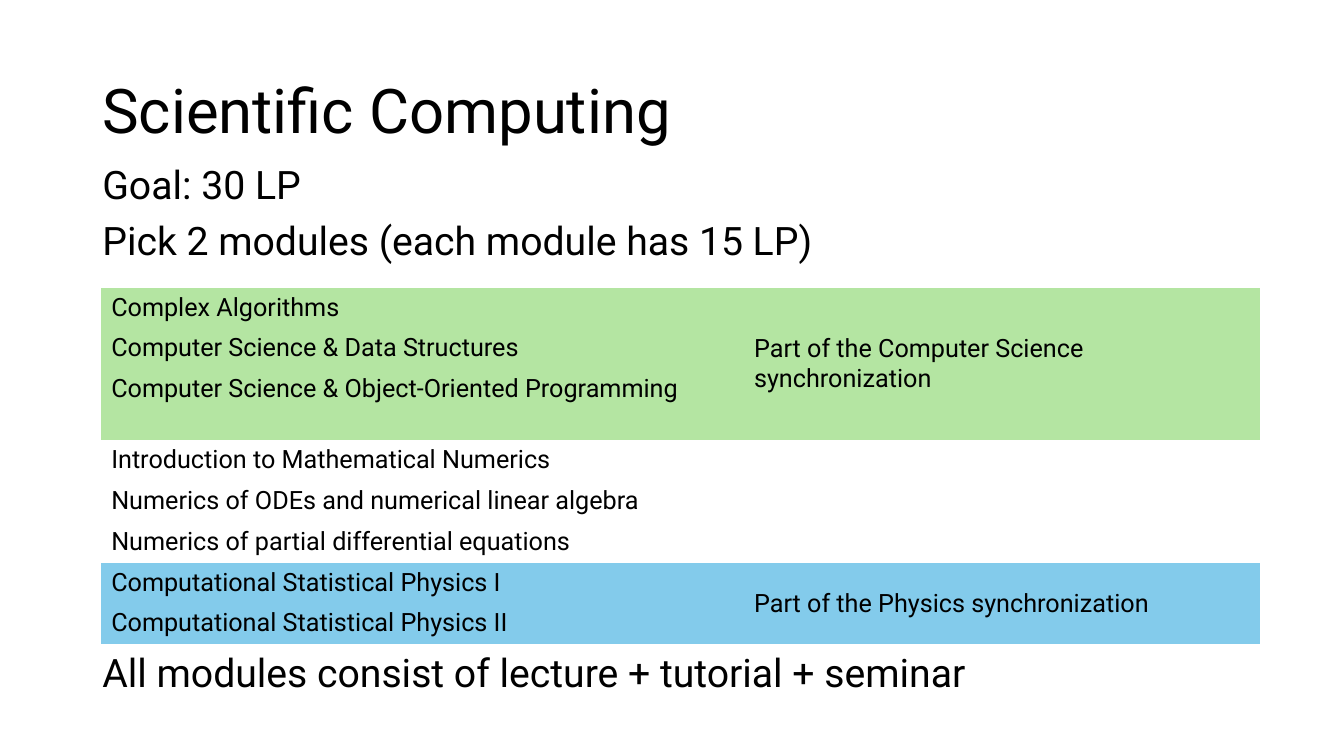
from dataclasses import dataclass

from pptx import Presentation
from pptx.dml.color import RGBColor
from pptx.enum.text import MSO_ANCHOR as Anchor
from pptx.oxml.ns import qn
from pptx.util import Cm, Pt


@dataclass(frozen=True)
class Theme:
    font: str = "Roboto"
    ink: str = "000000"
    computer_science: str = "B4E5A2"
    physics: str = "83CBEB"
    title_size: int = 44
    body_size: int = 28
    table_size: int = 18
    plain_table: str = "{2D5ABB26-0587-4C30-8999-92F81FD0307C}"


THEME = Theme()

# Each group: modules, shared remark, colour
MODULE_GROUPS = [
    (["Complex Algorithms",
      "Computer Science & Data Structures",
      "Computer Science & Object-Oriented Programming"],
     "Part of the Computer Science synchronization", THEME.computer_science),
    (["Introduction to Mathematical Numerics",
      "Numerics of ODEs and numerical linear algebra",
      "Numerics of partial differential equations"],
     None, None),
    (["Computational Statistical Physics I",
      "Computational Statistical Physics II"],
     "Part of the Physics synchronization", THEME.physics),
]


class SlideBuilder:
    def __init__(self, slide, theme):
        self.slide = slide
        self.theme = theme

    def style(self, paragraph, size):
        font = paragraph.font
        font.name = self.theme.font
        font.size = Pt(size)
        font.color.rgb = RGBColor.from_string(self.theme.ink)

    def text(self, lines, left, top, width, height, size,
             anchor=Anchor.TOP, line_spacing=1.0):
        box = self.slide.shapes.add_textbox(Cm(left), Cm(top), Cm(width), Cm(height))
        frame = box.text_frame
        frame.word_wrap = True
        frame.vertical_anchor = anchor
        frame.text = "\n".join(lines)
        for index, paragraph in enumerate(frame.paragraphs):
            paragraph.line_spacing = line_spacing
            paragraph.space_before = Pt(10 if index else 0)
            self.style(paragraph, size)

    def cell(self, cell, words, fill):
        if fill:
            cell.fill.solid()
            cell.fill.fore_color.rgb = RGBColor.from_string(fill)
        else:
            cell.fill.background()
        cell.text = words
        self.style(cell.text_frame.paragraphs[0], self.theme.table_size)

    def module_table(self, groups, left, top, widths, row_height):
        count = sum(len(modules) for modules, _, _ in groups)
        table = self.slide.shapes.add_table(
            count, len(widths), Cm(left), Cm(top),
            Cm(sum(widths)), Cm(row_height * count)).table
        table.first_row = table.horz_banding = False
        table._tbl.tblPr.find(qn("a:tableStyleId")).text = self.theme.plain_table
        for column, width in zip(table.columns, widths):
            column.width = Cm(width)
        for row in table.rows:
            row.height = Cm(row_height)

        first = 0
        for modules, remark, fill in groups:
            for row, module in enumerate(modules, first):
                self.cell(table.cell(row, 0), module, fill)
                self.cell(table.cell(row, 1), "", fill)
            if remark:
                remark_cell = table.cell(first, 1)
                remark_cell.merge(table.cell(first + len(modules) - 1, 1))
                self.cell(remark_cell, remark, fill)
                remark_cell.vertical_anchor = Anchor.MIDDLE
            first += len(modules)


def main():
    deck = Presentation()
    deck.slide_width, deck.slide_height = Cm(33.87), Cm(19.05)
    builder = SlideBuilder(deck.slides.add_slide(deck.slide_layouts[6]), THEME)
    left, width = 2.33, 29.21

    # Title and goal
    builder.text(["Scientific Computing"], left, 1.01, width, 3.68,
                 THEME.title_size, Anchor.MIDDLE, 0.9)
    builder.text(["Goal: 30 LP", "Pick 2 modules (each module has 15 LP)"],
                 left, 4.04, width, 3, THEME.body_size, line_spacing=0.9)

    # Modules to choose from
    builder.module_table(MODULE_GROUPS, 2.55, 7.25, [16.2, 13], 1.03)

    # Closing remark
    builder.text(["All modules consist of lecture + tutorial + seminar"],
                 left, 16.2, width, 1.5, THEME.body_size)

    deck.save("out.pptx")


if __name__ == "__main__":
    main()
